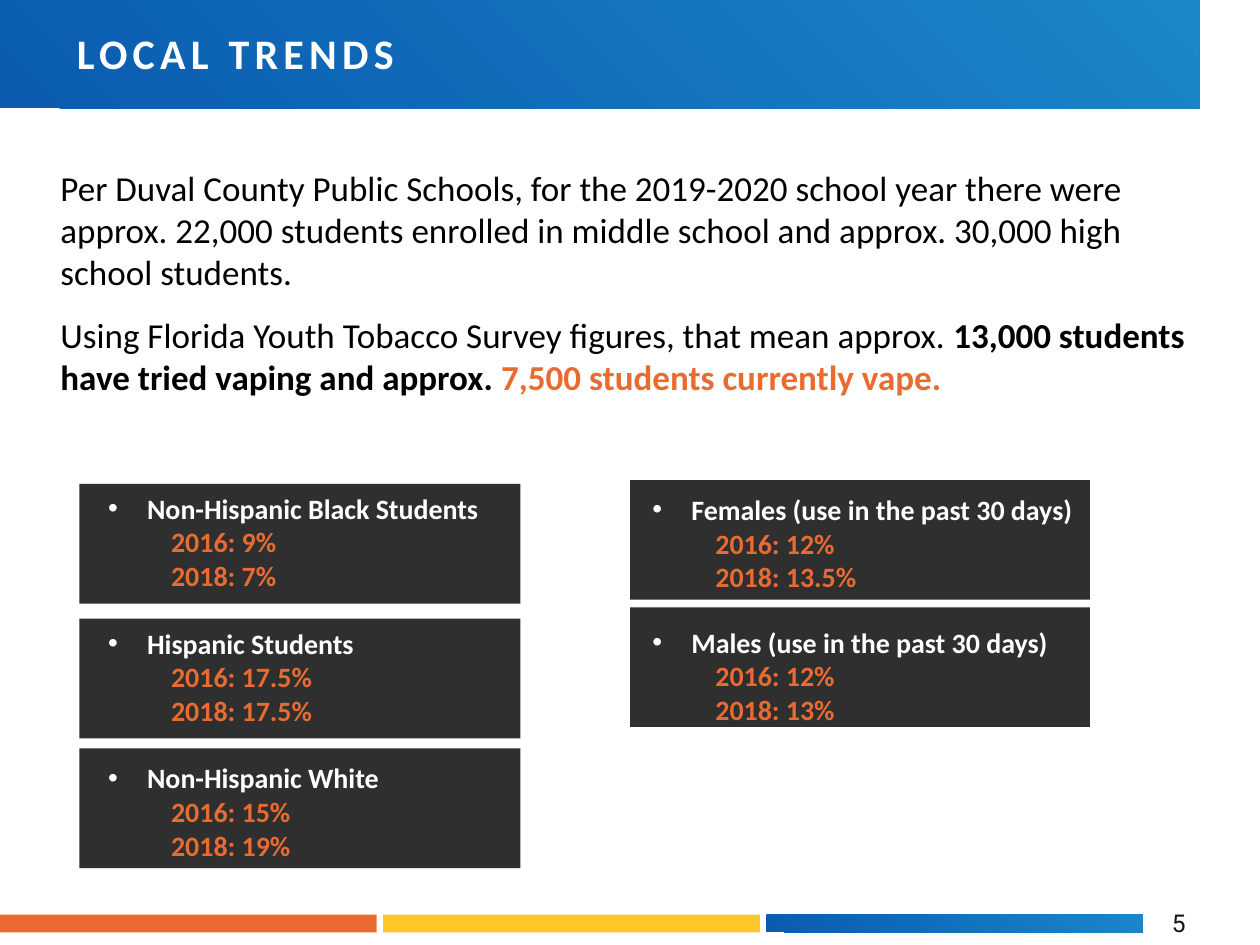
from pptx import Presentation
from pptx.dml.color import RGBColor
from pptx.enum.shapes import MSO_SHAPE
from pptx.enum.text import MSO_ANCHOR, MSO_AUTO_SIZE, PP_ALIGN
from pptx.oxml.ns import qn
from pptx.util import Inches, Pt
from lxml.etree import SubElement

COLORS = {"dark": "2F2F2F", "orange": "E86C31", "yellow": "FFC728",
          "navy": "0A5BAF", "sky": "1B86CA", "white": "FFFFFF",
          "black": "000000", "ink": "161515"}


class Deck:
    def __init__(self):
        self.prs = Presentation()
        self.prs.slide_width, self.prs.slide_height = Inches(10), Inches(7.5)
        self.slide = self.prs.slides.add_slide(self.prs.slide_layouts[1])

    def color(self, name):
        return RGBColor.from_string(COLORS[name])

    def font(self, item, size, color, bold=False, name="Calibri"):
        font = item.font
        font.name, font.size, font.bold = name, Pt(size), bold
        font.color.rgb = self.color(color)

    def place(self, shape, left, top, width, height):
        shape.left, shape.top = Inches(left), Inches(top)
        shape.width, shape.height = Inches(width), Inches(height)

    def indent(self, para, left, first=0, bullet=None):
        props = para._p.get_or_add_pPr()
        props.set("marL", str(Inches(left)))
        props.set("indent", str(Inches(first)))
        if bullet:
            SubElement(props, qn("a:buFont"), typeface="Arial")
            SubElement(props, qn("a:buChar"), char=bullet)
        else:
            SubElement(props, qn("a:buNone"))

    def rect(self, left, top, width, height, color=None):
        """Add a bar behind the text; without a color it gets the blue blend."""
        shape = self.slide.shapes.add_shape(
            MSO_SHAPE.RECTANGLE, Inches(left), Inches(top), Inches(width), Inches(height))
        shape.shadow.inherit = False
        shape.line.fill.background()
        if color:
            shape.fill.solid()
            shape.fill.fore_color.rgb = self.color(color)
        else:
            shape.fill.gradient()
            shape.fill.gradient_angle = 45
            for stop, name in zip(shape.fill.gradient_stops, ("navy", "sky")):
                stop.color.rgb = self.color(name)
        self.slide.shapes._spTree.insert(2, shape._element)

    def title(self, text):
        shape = self.slide.shapes.title
        self.place(shape, 0.54, 0.15, 8.5, 0.54)
        frame = shape.text_frame
        frame.margin_left = Inches(0.07)
        frame.vertical_anchor = MSO_ANCHOR.MIDDLE
        para = frame.paragraphs[0]
        para.alignment = PP_ALIGN.LEFT
        run = para.add_run()
        run.text = text
        self.font(run, 24, "white", True)
        run._r.get_or_add_rPr().set("spc", "300")

    def body(self, paras):
        shape = self.slide.placeholders[1]
        self.place(shape, 0.38, 1.27, 9.14, 1.95)
        frame = shape.text_frame
        frame.auto_size = MSO_AUTO_SIZE.NONE
        for i, runs in enumerate(paras):
            para = frame.add_paragraph() if i else frame.paragraphs[0]
            self.indent(para, 0)
            para.space_before, para.space_after = Pt(0), Pt(12)
            for text, color, bold in runs:
                run = para.add_run()
                run.text = text
                self.font(run, 20, color, bold)

    def text(self, left, top, width, height):
        box = self.slide.shapes.add_textbox(
            Inches(left), Inches(top), Inches(width), Inches(height))
        box.text_frame.word_wrap = True
        return box.text_frame

    def trends(self, left, top, height, gap, groups):
        """List each group as a bullet with its yearly rates below."""
        frame = self.text(left, top, 3.77, height)
        for i, (group, old, new) in enumerate(groups):
            head = frame.add_paragraph() if i else frame.paragraphs[0]
            head.text = group
            self.indent(head, 0.31, -0.31, "•")
            head.space_before = Pt(gap if i else 0)
            self.font(head, 16, "white", True)
            for year, rate in ((2016, old), (2018, new)):
                para = frame.add_paragraph()
                para.text = f"{year}: {rate}"
                self.indent(para, 0.5)
                self.font(para, 16, "orange", True)

    def number(self, text):
        frame = self.text(9.19, 7.15, 0.28, 0.35)
        frame.margin_left = frame.margin_right = Inches(0.06)
        frame.vertical_anchor = MSO_ANCHOR.MIDDLE
        para = frame.paragraphs[0]
        para.text = text
        para.alignment = PP_ALIGN.RIGHT
        self.font(para, 14, "ink", name="Roboto")


def main():
    deck = Deck()
    deck.rect(0, 0, 9.52, 0.86)
    for i, color in enumerate(("orange", "yellow", None)):
        deck.rect(i * 3.04, 7.26, 2.99, 0.14, color)
    for left, width, tops in ((0.63, 3.5, (3.84, 4.91, 5.94)), (5, 3.65, (3.81, 4.82))):
        for top in tops:
            deck.rect(left, top, width, 0.95, "dark")

    deck.title("LOCAL TRENDS")
    deck.body([
        [("Per Duval County Public Schools, for the 2019-2020 school year there were "
          "approx. 22,000 students enrolled in middle school and approx. 30,000 high "
          "school students.", "black", False)],
        [("Using Florida Youth Tobacco Survey figures, that mean approx. ", "black", False),
         ("13,000 students have tried vaping and approx. ", "black", True),
         ("7,500 students currently vape.", "orange", True)],
    ])
    deck.trends(0.76, 3.85, 3.06, 19.5, [
        ("Non-Hispanic Black Students", "9%", "7%"),
        ("Hispanic Students", "17.5%", "17.5%"),
        ("Non-Hispanic White", "15%", "19%"),
    ])
    deck.trends(5.08, 3.86, 1.97, 18.3, [
        ("Females (use in the past 30 days)", "12%", "13.5%"),
        ("Males (use in the past 30 days)", "12%", "13%"),
    ])
    deck.number("5")
    deck.prs.save("out.pptx")


if __name__ == "__main__":
    main()
